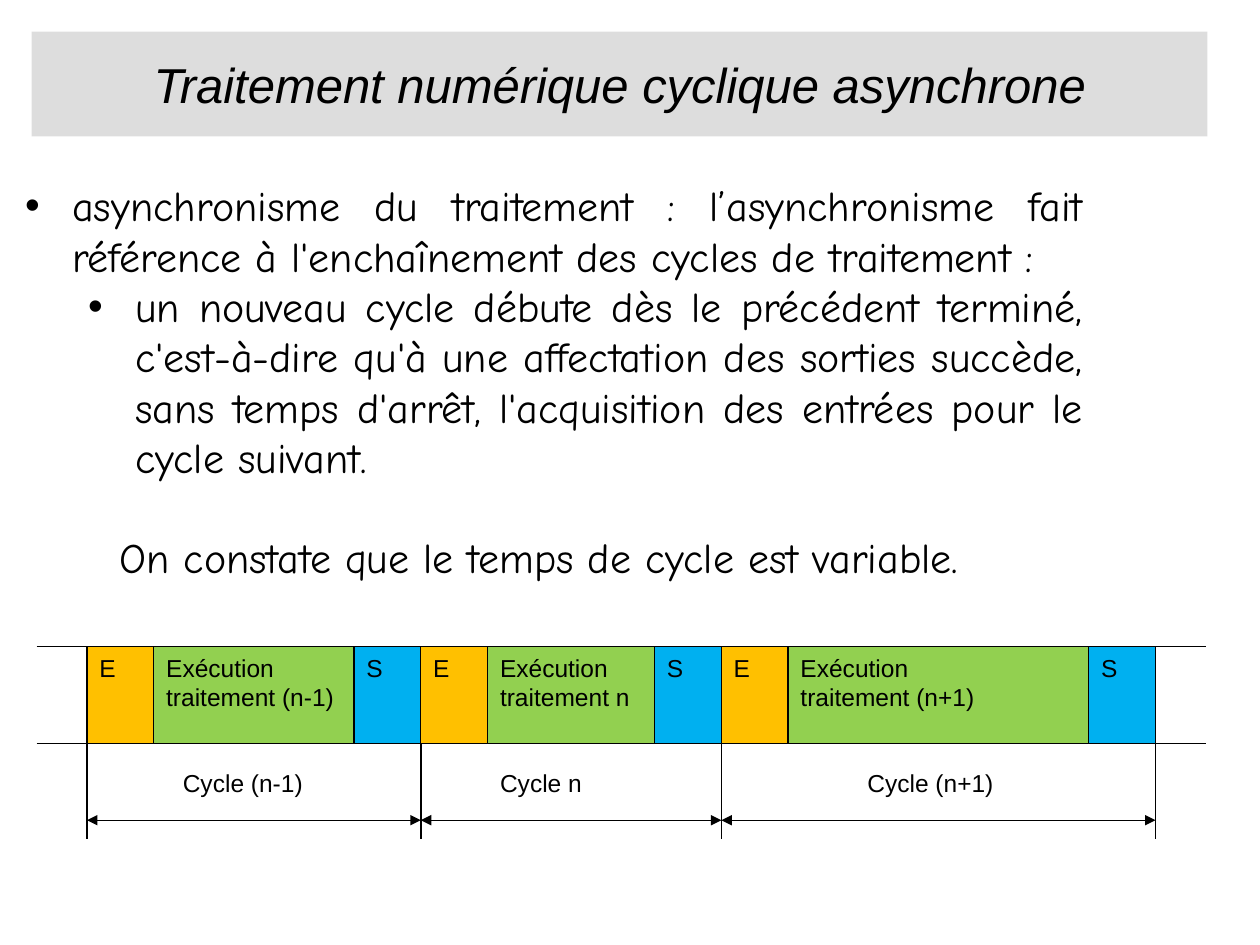
"""Build the slide on asynchronous cyclic digital processing."""
import pptx
import pptx.util
import pptx.dml.color
import pptx.enum.shapes
import pptx.enum.text
import pptx.oxml.ns
import lxml.etree

Pt = pptx.util.Pt
ALIGN = pptx.enum.text.PP_ALIGN
ANCHOR = pptx.enum.text.MSO_ANCHOR
RECTANGLE = pptx.enum.shapes.MSO_SHAPE.RECTANGLE
STRAIGHT = pptx.enum.shapes.MSO_CONNECTOR.STRAIGHT
qn = pptx.oxml.ns.qn
color = pptx.dml.color.RGBColor.from_string


def write(box, lines, size, font="Arial", align=ALIGN.LEFT, anchor=ANCHOR.TOP):
    frame = box.text_frame
    frame.word_wrap = True
    frame.vertical_anchor = anchor
    frame.text = "\n".join(lines)
    for para in frame.paragraphs:
        para.alignment = align
        para.font.name = font
        para.font.size = Pt(size)
        para.font.color.rgb = color("000000")
    return frame.paragraphs


def draw_line(left, top, right, bottom, arrows=False):
    line = page.shapes.add_connector(STRAIGHT, Pt(left), Pt(top), Pt(right), Pt(bottom))
    line.line.color.rgb = color("000000")
    line.line.width = Pt(0.75)
    if arrows:
        for end in ("headEnd", "tailEnd"):
            lxml.etree.SubElement(line.line._get_or_add_ln(), qn("a:" + end), type="triangle")
    lxml.etree.SubElement(line._element.spPr, qn("a:effectLst"))


deck = pptx.Presentation()
deck.slide_width, deck.slide_height = Pt(720), Pt(540)
page = deck.slides.add_slide(deck.slide_layouts[6])

title = page.shapes.add_shape(RECTANGLE, Pt(18), Pt(18), Pt(672), Pt(60))
title.shadow.inherit = False
title.fill.solid()
title.fill.fore_color.rgb = color("DDDDDD")
title.line.fill.background()
heading = write(title, ["Traitement numérique cyclique asynchrone"], 28,
                align=ALIGN.CENTER, anchor=ANCHOR.MIDDLE)
heading[0].font.italic = True

body = page.shapes.add_textbox(Pt(7.2), Pt(54), Pt(618.5), Pt(327))
paragraphs = write(body, [
    "asynchronisme du traitement : l’asynchronisme fait référence à "
    "l'enchaînement des cycles de traitement :",
    "un nouveau cycle débute dès le précédent terminé, c'est-à-dire qu'à une "
    "affectation des sorties succède, sans temps d'arrêt, l'acquisition des "
    "entrées pour le cycle suivant.",
    "On constate que le temps de cycle est variable.",
], 24, "Comic Neue", ALIGN.JUSTIFY, ANCHOR.MIDDLE)
paragraphs[1].level = 1
paragraphs[2].space_before = Pt(28)
for para, margin, indent, bullet in zip(paragraphs, (27, 63, 0), (-27, -27, 54), "•• "):
    properties = para._p.get_or_add_pPr()
    properties.set("marL", str(Pt(margin)))
    properties.set("indent", str(Pt(indent)))
    if bullet == "•":
        lxml.etree.SubElement(properties, qn("a:buFont"), typeface="Arial")
        lxml.etree.SubElement(properties, qn("a:buChar"), char=bullet)

unit, start, stub = 19.08, 49.7, 28.8
band_top, band_bottom = 369.4, 424.8
label_top, arrow_level, tick_bottom = 435.6, 468.7, 479.5
cycles = [
    ("Cycle (n-1)", ["Exécution traitement (n-1)"], 6, 2.5),
    ("Cycle n", ["Exécution traitement n"], 5, 2),
    ("Cycle (n+1)", ["Exécution", "traitement (n+1)"], 9, 4),
]

edge = start
draw_line(start, band_bottom, start, tick_bottom)
for name, execution, units, label_offset in cycles:
    cycle_start = edge
    phases = [(["E"], 2, "FFC000"), (execution, units, "92D050"), (["S"], 2, "00B0F0")]
    for lines, span_units, fill in phases:
        width = span_units * unit
        box = page.shapes.add_shape(RECTANGLE, Pt(edge), Pt(band_top), Pt(width),
                                    Pt(band_bottom - band_top))
        box.shadow.inherit = False
        box.fill.solid()
        box.fill.fore_color.rgb = color(fill)
        box.line.color.rgb = color("000000")
        box.line.width = Pt(0.75)
        write(box, lines, 14)
        edge += width
    draw_line(edge, band_bottom, edge, tick_bottom)
    draw_line(cycle_start, arrow_level, edge, arrow_level, arrows=True)
    label = page.shapes.add_textbox(Pt(cycle_start + label_offset * unit), Pt(label_top),
                                    Pt(5.5 * unit), Pt(33))
    write(label, [name], 14)

for level in (band_top, band_bottom):
    draw_line(start - stub, level, start, level)
    draw_line(edge, level, edge + stub, level)

deck.save("out.pptx")
